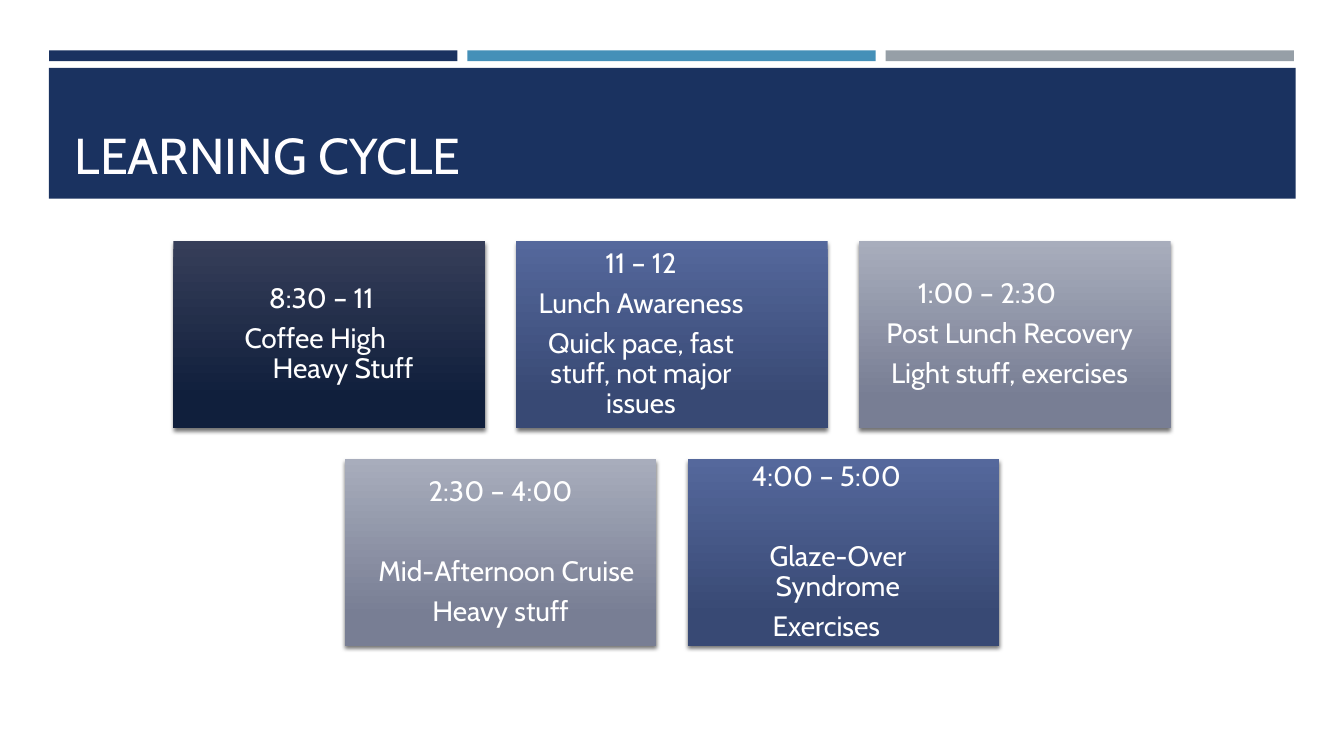
from pptx import Presentation
from pptx.dml.color import RGBColor
from pptx.enum.shapes import MSO_SHAPE
from pptx.enum.text import MSO_ANCHOR, PP_ALIGN
from pptx.oxml import parse_xml
from pptx.oxml.ns import nsdecls
from pptx.util import Cm, Pt

NAVY, BLUE, GRAY = ("363E59", "101F3C"), ("55689C", "384974"), ("A8ADBC", "787E94")
LINE_GAP = 7
EMPTY_LINE_GAP = 35.5

SESSIONS = [
    [
        (NAVY, [("8:30 – 11", -0.2, LINE_GAP), ("Coffee High", -0.35, 0),
                ("Heavy Stuff", 0.7, 0)]),
        (BLUE, [("11 – 12", -0.78, LINE_GAP), ("Lunch Awareness", 0, LINE_GAP),
                ("Quick pace, fast stuff, not major issues", 0, 0)]),
        (GRAY, [("1:00 – 2:30", -0.7, LINE_GAP), ("Post Lunch Recovery", -0.13, LINE_GAP),
                ("Light stuff, exercises", 0, 0)]),
    ],
    [
        (GRAY, [("2:30 – 4:00", 0, EMPTY_LINE_GAP), ("Mid-Afternoon Cruise", 0.15, LINE_GAP),
                ("Heavy stuff", 0, 0)]),
        (BLUE, [("4:00 – 5:00", -0.43, EMPTY_LINE_GAP), ("Glaze-Over Syndrome", 0.29, LINE_GAP),
                ("Exercises", 0, 0)]),
    ],
]


def color(value):
    return RGBColor.from_string(value)


def write(para, text, size=20, ink="FFFFFF", align=PP_ALIGN.CENTER, shift=0, after=0, spacing=0.9):
    para.alignment = align
    para.line_spacing = spacing
    para.space_before = Pt(0)
    para.space_after = Pt(after)
    if shift:
        side = "marL" if shift > 0 else "marR"
        para._p.get_or_add_pPr().set(side, str(Cm(2 * abs(shift))))
    span = para.add_run()
    span.text = text
    span.font.name = "Cabin"
    span.font.size = Pt(size)
    span.font.color.rgb = color(ink)


class SlideBuilder:
    def __init__(self, page):
        self.page = page

    def block(self, left, top, width, height):
        box = self.page.shapes.add_shape(
            MSO_SHAPE.RECTANGLE, Cm(left), Cm(top), Cm(width), Cm(height))
        box.line.fill.background()
        box.shadow.inherit = False
        return box

    def bar(self, left, top, width, height, fill):
        box = self.block(left, top, width, height)
        box.fill.solid()
        box.fill.fore_color.rgb = color(fill)

    def title(self, text):
        box = self.page.shapes.title
        box.left, box.top, box.width, box.height = Cm(1.63), Cm(1.96), Cm(30.63), Cm(2.82)
        box.text_frame.vertical_anchor = MSO_ANCHOR.BOTTOM
        write(box.text_frame.paragraphs[0], text, size=36, ink="FFFEFF",
              align=PP_ALIGN.LEFT, spacing=1.0)
        box.element.getparent().append(box.element)

    def card(self, left, top, width, height, shades, lines):
        box = self.block(left, top, width, height)
        box.fill.gradient()
        box.fill.gradient_angle = 270
        for stop, position, shade in zip(box.fill.gradient_stops, (0, 0.84), shades):
            stop.position = position
            stop.color.rgb = color(shade)
        effects = box.element.spPr.find("{*}effectLst")
        effects.append(parse_xml(
            f'<a:outerShdw {nsdecls("a")} blurRad="{Pt(3)}" dist="{Pt(2)}" dir="5400000" '
            'rotWithShape="0"><a:srgbClr val="000000"><a:alpha val="55000"/>'
            '</a:srgbClr></a:outerShdw>'))
        frame = box.text_frame
        frame.word_wrap = True
        frame.vertical_anchor = MSO_ANCHOR.MIDDLE
        frame.margin_left = frame.margin_right = Cm(0.2)
        frame.margin_top = frame.margin_bottom = Cm(0.2)
        for index, (text, shift, after) in enumerate(lines):
            para = frame.add_paragraph() if index else frame.paragraphs[0]
            write(para, text, shift=shift, after=after)


def main():
    deck = Presentation()
    deck.slide_width, deck.slide_height = Cm(33.87), Cm(19.05)
    builder = SlideBuilder(deck.slides.add_slide(deck.slide_layouts[5]))
    for index, fill in enumerate(("1A3260", "4590B8", "969FA7")):
        builder.bar(1.24 + index * 10.54, 1.27, 10.29, 0.27, fill)
    builder.bar(1.23, 1.71, 31.42, 3.3, "1A3260")
    builder.title("LEARNING CYCLE")
    for row, sessions in enumerate(SESSIONS):
        for column, (shades, lines) in enumerate(sessions):
            left = 4.37 + (column + row / 2) * 8.64
            builder.card(left, 6.07 + row * 5.49, 7.85, 4.72, shades, lines)
    deck.save("out.pptx")


if __name__ == "__main__":
    main()
